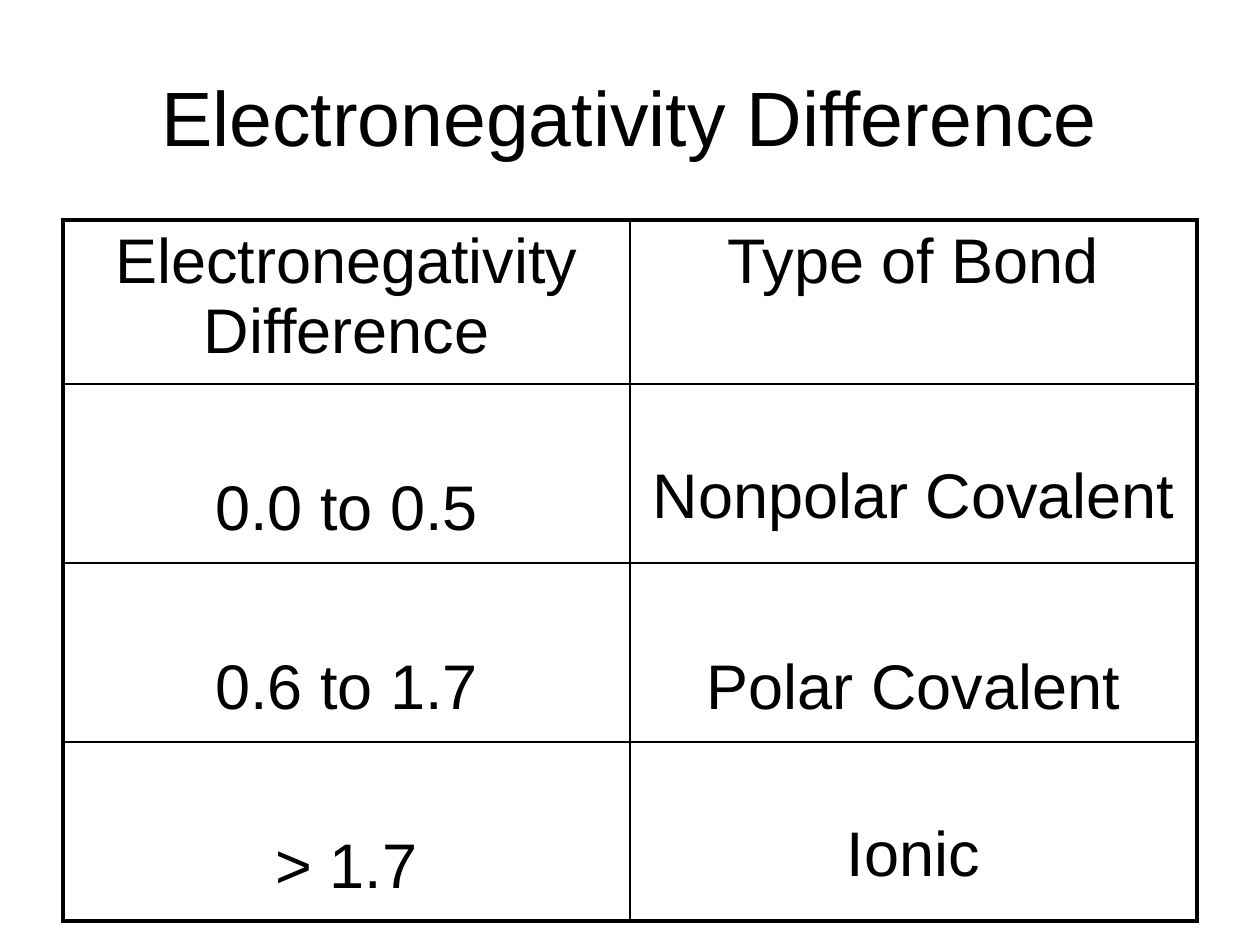
import pptx
import pptx.util
import pptx.dml.color
import pptx.enum.text
import pptx.oxml.ns
import lxml.etree

PX = 914400 / 126
COLORS = {"ink": "000000", "paper": "FFFFFF"}
CENTER = pptx.enum.text.PP_ALIGN.CENTER
MIDDLE = pptx.enum.text.MSO_ANCHOR.MIDDLE
TOP = pptx.enum.text.MSO_ANCHOR.TOP


def px(n):
    return pptx.util.Emu(round(n * PX))


def write(tf, text, size):
    tf.word_wrap = True
    p = tf.paragraphs[0]
    p.alignment = CENTER
    r = p.add_run()
    r.text = text
    for name, value in {"name": "Arial", "size": pptx.util.Pt(size)}.items():
        setattr(r.font, name, value)
    r.font.color.rgb = pptx.dml.color.RGBColor.from_string(COLORS["ink"])


prs = pptx.Presentation()
prs.slide_width, prs.slide_height = px(1260), px(945)
s = prs.slides.add_slide(prs.slide_layouts[6])
s.background.fill.solid()
s.background.fill.fore_color.rgb = pptx.dml.color.RGBColor.from_string(COLORS["paper"])

sp = s.shapes.add_textbox(px(63), px(38), px(1133), px(156))
sp.text_frame.vertical_anchor = MIDDLE
write(sp.text_frame, "Electronegativity Difference", 44)

rows = [
    [("Electronegativity Difference", 6), ("Type of Bond", 6)],
    [("0.0 to 0.5", 89), ("Nonpolar Covalent", 77)],
    [("0.6 to 1.7", 89), ("Polar Covalent", 89)],
    [("> 1.7", 89), ("Ionic", 77)],
]
heights = [164, 179, 179, 179]
table = s.shapes.add_table(4, 2, px(63), px(220), px(1134), px(sum(heights))).table
for name in ("first_row", "horz_banding"):
    setattr(table, name, False)
for col in table.columns:
    col.width = px(567)

for i, row in enumerate(rows):
    table.rows[i].height = px(heights[i])
    for j, (text, top) in enumerate(row):
        cell = table.cell(i, j)
        cell_format = {
            "margin_left": px(13),
            "margin_right": px(13),
            "margin_top": px(top),
            "margin_bottom": px(6),
            "vertical_anchor": TOP,
        }
        for name, value in cell_format.items():
            setattr(cell, name, value)
        write(cell.text_frame, text, 36)
        outer = {"lnL": j == 0, "lnR": j == 1, "lnT": i == 0, "lnB": i == 3}
        tc_pr = cell._tc.get_or_add_tcPr()
        for tag, is_outer in outer.items():
            width = pptx.util.Pt(2.25 if is_outer else 1)
            ln = lxml.etree.SubElement(tc_pr, pptx.oxml.ns.qn("a:" + tag), w=str(width))
            fill = lxml.etree.SubElement(ln, pptx.oxml.ns.qn("a:solidFill"))
            lxml.etree.SubElement(fill, pptx.oxml.ns.qn("a:srgbClr"), val=COLORS["ink"])
        cell.fill.background()

prs.save("out.pptx")
